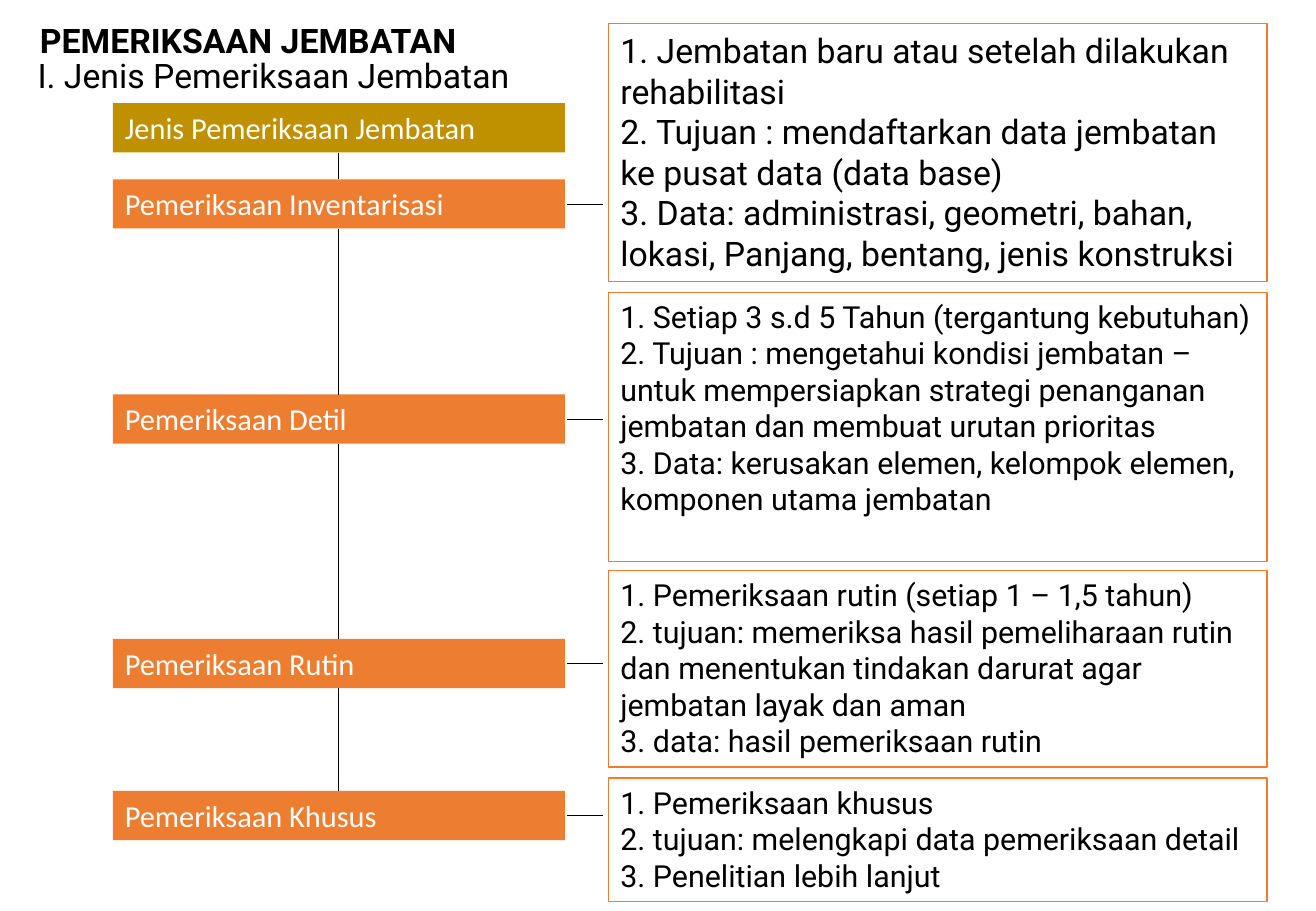
import pptx
import pptx.util
import pptx.dml.color
import pptx.enum.shapes
import pptx.enum.text
import lxml.etree
from dataclasses import dataclass

Cm = pptx.util.Cm
Pt = pptx.util.Pt


@dataclass(frozen=True)
class Theme:
    black: str = "000000"
    white: str = "FFFFFF"
    gold: str = "BF9000"
    orange: str = "ED7D31"
    heading_font: str = "Roboto"
    box_font: str = "Calibri"
    large: int = 20
    normal: int = 18


theme = Theme()


def rgb(value):
    return pptx.dml.color.RGBColor.from_string(value)


def write(shape, lines, font=theme.heading_font, size=theme.normal, color=theme.black, bold=False,
          anchor=pptx.enum.text.MSO_ANCHOR.TOP):
    frame = shape.text_frame
    frame.word_wrap = True
    frame.auto_size = pptx.enum.text.MSO_AUTO_SIZE.NONE
    frame.vertical_anchor = anchor
    frame.text = "\n".join(lines)
    for paragraph in frame.paragraphs:
        paragraph.alignment = pptx.enum.text.PP_ALIGN.LEFT
        paragraph.space_before = Pt(0)
        paragraph.line_spacing = 1.0
        paragraph.font.name = font
        paragraph.font.size = Pt(size)
        paragraph.font.bold = bold
        paragraph.font.color.rgb = rgb(color)


presentation = pptx.Presentation()
presentation.slide_width = Cm(27.51)
presentation.slide_height = Cm(19.05)
slide = presentation.slides.add_slide(presentation.slide_layouts[2])
shapes = slide.shapes

title, subtitle = slide.placeholders
headings = [
    (title, "PEMERIKSAAN JEMBATAN", True, 0.58, 0.28, 14.8),
    (subtitle, "I. Jenis Pemeriksaan Jembatan", False, 0.53, 1.02, 12.1),
]
for placeholder, text, bold, left, top, width in headings:
    placeholder.left, placeholder.top = Cm(left), Cm(top)
    placeholder.width, placeholder.height = Cm(width), Cm(1.11)
    write(placeholder, [text], size=theme.large, bold=bold)

box_left, box_width, box_height = 2.36, 9.45, 1.03
boxes = []
for text, top, color in [
    ("Jenis Pemeriksaan Jembatan", 2.16, theme.gold),
    ("Pemeriksaan Inventarisasi", 3.75, theme.orange),
    ("Pemeriksaan Detil", 8.25, theme.orange),
    ("Pemeriksaan Rutin", 13.36, theme.orange),
    ("Pemeriksaan Khusus", 16.54, theme.orange),
]:
    box = shapes.add_shape(pptx.enum.shapes.MSO_SHAPE.RECTANGLE,
                           Cm(box_left), Cm(top), Cm(box_width), Cm(box_height))
    box.shadow.inherit = False
    box.fill.solid()
    box.fill.fore_color.rgb = rgb(color)
    box.line.fill.background()
    write(box, [text], font=theme.box_font, color=theme.white)
    boxes.append(box)

descriptions = [
    (0.5, 5.39, theme.large, [
        "1. Jembatan baru atau setelah dilakukan rehabilitasi",
        "2. Tujuan : mendaftarkan data jembatan ke pusat data (data base)",
        "3. Data: administrasi, geometri, bahan, lokasi, Panjang, bentang, jenis konstruksi",
    ]),
    (6.11, 5.64, theme.normal, [
        "1. Setiap 3 s.d 5 Tahun (tergantung kebutuhan)",
        "2. Tujuan : mengetahui kondisi jembatan – untuk mempersiapkan strategi penanganan "
        "jembatan dan membuat urutan prioritas",
        "3. Data: kerusakan elemen, kelompok elemen, komponen utama jembatan",
    ]),
    (11.93, 4.11, theme.normal, [
        "1. Pemeriksaan rutin (setiap 1 – 1,5 tahun)",
        "2. tujuan: memeriksa hasil pemeliharaan rutin dan menentukan tindakan darurat agar "
        "jembatan layak dan aman",
        "3. data: hasil pemeriksaan rutin",
    ]),
    (16.27, 2.58, theme.normal, [
        "1. Pemeriksaan khusus",
        "2. tujuan: melengkapi data pemeriksaan detail",
        "3. Penelitian lebih lanjut",
    ]),
]
for top, height, size, lines in descriptions:
    description = shapes.add_textbox(Cm(12.72), Cm(top), Cm(13.77), Cm(height))
    description.line.color.rgb = rgb(theme.orange)
    description.line.width = Pt(0.75)
    write(description, lines, size=size)

connectors = []
straight = pptx.enum.shapes.MSO_CONNECTOR.STRAIGHT
for upper, lower in zip(boxes, boxes[1:]):
    trunk = shapes.add_connector(straight, 0, 0, 0, 0)
    trunk.begin_connect(upper, 2)
    trunk.end_connect(lower, 0)
    middle = lower.top + lower.height // 2
    branch = shapes.add_connector(straight, Cm(11.86), middle, Cm(12.6), middle)
    connectors += [trunk, branch]

for connector in connectors:
    connector.line.color.rgb = rgb(theme.black)
    connector.line.width = Pt(0.5)
    lxml.etree.SubElement(connector._element.spPr, pptx.oxml.ns.qn("a:effectLst"))

presentation.save("out.pptx")
